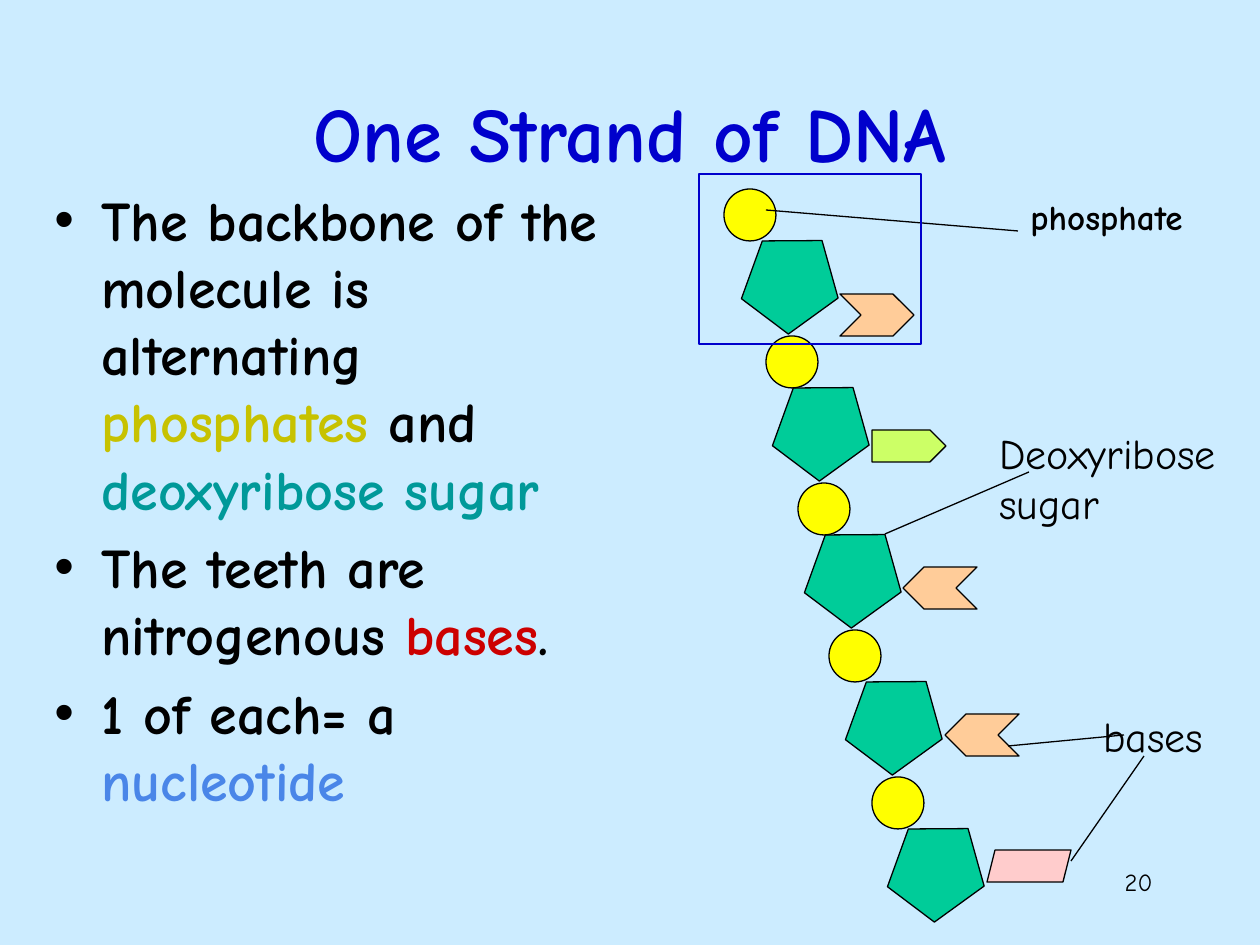
from dataclasses import dataclass

from lxml import etree
from pptx import Presentation
from pptx import util as u
from pptx.dml.color import RGBColor
from pptx.enum import shapes, text
from pptx.oxml.ns import qn

PX = 914400 / 126  # EMU in one px


@dataclass(frozen=True)
class Theme:
    font: str = "Comic Neue"
    bg: str = "CCECFF"
    ink: str = "000000"
    blue: str = "0000CC"
    olive: str = "C7C200"
    teal: str = "009999"
    red: str = "CC0000"
    sky: str = "4A86E8"
    phosphate: str = "FFFF00"
    sugar: str = "00CC99"
    orange: str = "FFCC99"
    lime: str = "CCFF66"
    pink: str = "FFCCCC"
    title_pt: int = 44
    body_pt: int = 32
    label_pt: int = 24
    small_pt: int = 20
    number_pt: int = 14
    line_pt: float = 0.75


T = Theme()
KIND = shapes.MSO_SHAPE
ALIGN = text.PP_ALIGN

# Content: a paragraph is a list of (wording, colour) runs
TITLE = [[("One Strand of DNA", T.blue)]]
BULLETS = [
    [("The backbone of the molecule is alternating ", T.ink), ("phosphates", T.olive),
     (" and ", T.ink), ("deoxyribose sugar", T.teal)],
    [("The teeth are nitrogenous ", T.ink), ("bases", T.red), (".", T.ink)],
    [("1 of each= a ", T.ink), ("nucleotide", T.sky)],
]
# Labels: lines, box, format
LABELS = [
    (["phosphate"], (1018, 189, 195, 54), dict(size=T.small_pt, bold=True)),
    (["Deoxyribose", "sugar"], (987, 421, 285, 63), dict(size=T.label_pt)),
    (["bases"], (1091, 704, 158, 63), dict(size=T.label_pt)),
    (["20"], (903, 861, 262, 63), dict(size=T.number_pt, align=ALIGN.RIGHT)),
]
# Strand: left edges of each phosphate and its sugar, top to bottom
STRAND = [(724, 746), (766, 777), (798, 809), (829, 850), (872, 892)]
STRAND_TOP, STEP, SUGAR_DROP = 189, 147, 42
PHOSPHATE_SIZE, SUGAR_SIZE, SUGAR_TURN = 52, 95, 37
# Bases: kind, box, fill, rotation
BASES = [
    (KIND.CHEVRON, (840, 294, 74, 42), T.orange, 0),
    (KIND.CHEVRON, (903, 567, 74, 42), T.orange, 180),
    (KIND.CHEVRON, (945, 714, 74, 42), T.orange, 180),
    (KIND.PENTAGON, (872, 430, 74, 32), T.lime, 0),
    (KIND.PARALLELOGRAM, (987, 850, 84, 32), T.pink, 0),
]
# Leader lines: x1, y1, x2, y2
LEADERS = [(766, 210, 1018, 231), (885, 534, 1029, 472),
           (1071, 861, 1144, 756), (1008, 746, 1124, 735)]
FRAME = (699, 174, 222, 170)


def emu(*lengths):
    return [u.Emu(round(n * PX)) for n in lengths]


def rgb(value):
    return RGBColor.from_string(value)


def write(tf, paragraphs, size, bold=False, align=ALIGN.LEFT, gap=0,
          anchor=text.MSO_ANCHOR.TOP, bullet=False):
    tf.word_wrap = True
    tf.auto_size = text.MSO_AUTO_SIZE.NONE
    tf.vertical_anchor = anchor
    for i, runs in enumerate(paragraphs):
        p = tf.add_paragraph() if i else tf.paragraphs[0]
        p.alignment = align
        p.space_before = u.Pt(gap if i else 0)
        for wording, colour in runs:
            r = p.add_run()
            r.text = wording
            r.font.name = T.font
            r.font.size = u.Pt(size)
            r.font.bold = bold
            r.font.color.rgb = rgb(colour)
        if bullet:
            add_bullet(p)


def add_bullet(p):
    pPr = p._p.get_or_add_pPr()
    indent = emu(47)[0]
    pPr.set("marL", str(indent))
    pPr.set("indent", str(-indent))
    colour = etree.SubElement(pPr, qn("a:buClr"))
    etree.SubElement(colour, qn("a:srgbClr")).set("val", T.ink)
    etree.SubElement(pPr, qn("a:buFont")).set("typeface", "Arial")
    etree.SubElement(pPr, qn("a:buChar")).set("char", "•")


def add_text(s, box, paragraphs, **fmt):
    write(s.shapes.add_textbox(*emu(*box)).text_frame, paragraphs, **fmt)


def add_part(s, kind, box, fill=None, line=T.ink, turn=0):
    sp = s.shapes.add_shape(kind, *emu(*box))
    sp.shadow.inherit = False
    sp.rotation = turn
    if fill:
        sp.fill.solid()
        sp.fill.fore_color.rgb = rgb(fill)
    else:
        sp.fill.background()
    sp.line.color.rgb = rgb(line)
    sp.line.width = u.Pt(T.line_pt)


def add_leader(s, ends):
    line = s.shapes.add_connector(shapes.MSO_CONNECTOR.STRAIGHT, *emu(*ends))
    line.line.color.rgb = rgb(T.ink)
    line.line.width = u.Pt(T.line_pt)
    etree.SubElement(line._element.spPr, qn("a:effectLst"))


def main():
    prs = Presentation()
    prs.slide_width, prs.slide_height = emu(1260, 945)
    s = prs.slides.add_slide(prs.slide_layouts[5])
    s.background.fill.solid()
    s.background.fill.fore_color.rgb = rgb(T.bg)

    # Title and bullets
    title = s.shapes.title
    title.left, title.top, title.width, title.height = emu(94, 53, 1072, 157)
    write(title.text_frame, TITLE, size=T.title_pt, bold=True,
          align=ALIGN.CENTER, anchor=text.MSO_ANCHOR.MIDDLE)
    add_text(s, (42, 179, 598, 651), BULLETS, size=T.body_pt, bold=True,
             gap=6.4, bullet=True)

    # Backbone: sugars behind phosphates
    tops = [STRAND_TOP + i * STEP for i in range(len(STRAND))]
    for (_, x), y in zip(STRAND, tops):
        add_part(s, KIND.REGULAR_PENTAGON, (x, y + SUGAR_DROP, SUGAR_SIZE, SUGAR_SIZE),
                 T.sugar, turn=SUGAR_TURN)
    for (x, _), y in zip(STRAND, tops):
        add_part(s, KIND.OVAL, (x, y, PHOSPHATE_SIZE, PHOSPHATE_SIZE), T.phosphate)

    # Bases, leaders and labels
    for kind, box, fill, turn in BASES:
        add_part(s, kind, box, fill, turn=turn)
    for ends in LEADERS:
        add_leader(s, ends)
    for lines, box, fmt in LABELS:
        add_text(s, box, [[(line, T.ink)] for line in lines], **fmt)

    # Frame around one nucleotide
    add_part(s, KIND.RECTANGLE, FRAME, line=T.blue)
    prs.save("out.pptx")


if __name__ == "__main__":
    main()
